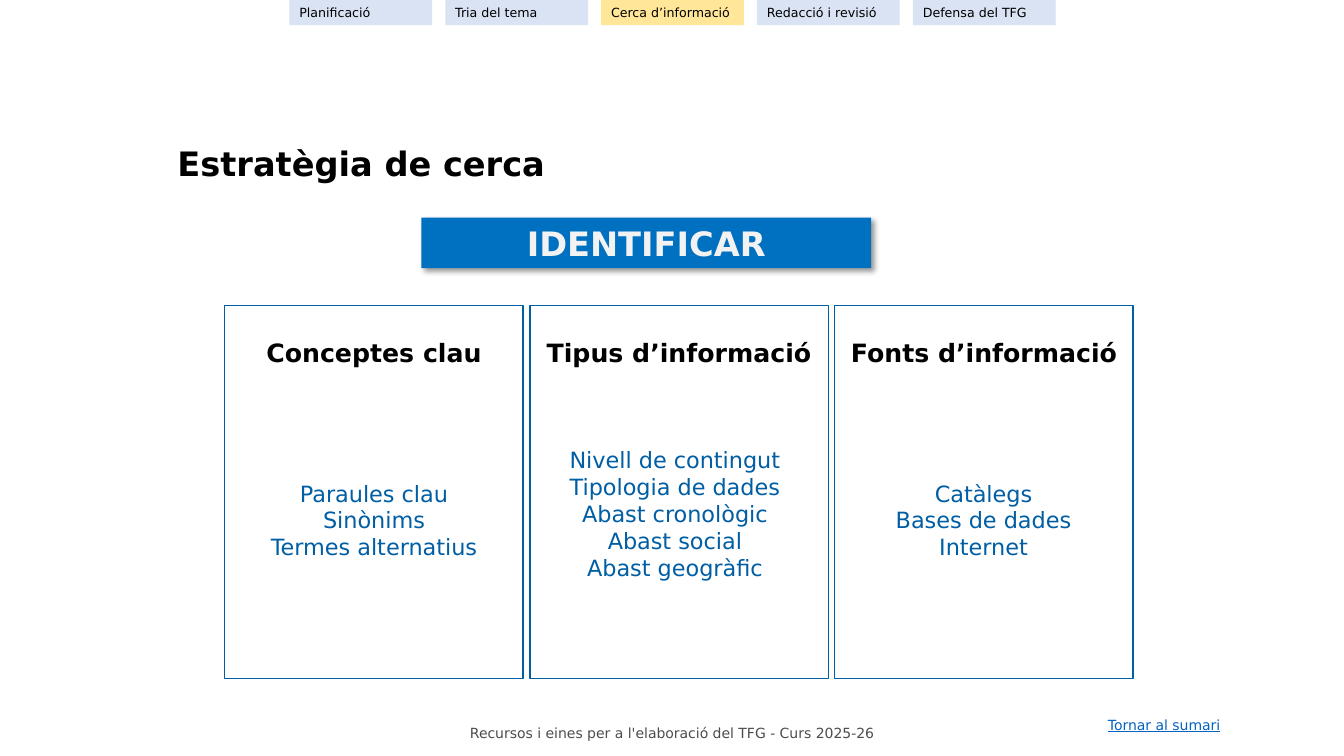
from lxml import etree
from pptx import Presentation
from pptx.dml.color import RGBColor
from pptx.enum import shapes, text
from pptx.oxml import ns
from pptx.util import Inches, Pt

FONT = "DejaVu Sans"
BLACK, BLUE, DARK_BLUE = "000000", "0070C0", "005EA4"
TAB, ACTIVE_TAB = "DAE3F3", "FFE699"
TABS = ["Planificació", "Tria del tema", "Cerca d’informació",
        "Redacció i revisió", "Defensa del TFG"]
COLUMNS = [
    ("Conceptes clau", ["Paraules clau", "Sinònims", "Termes alternatius"],
     (0.26, 1.68, 2.44, 0.91)),
    ("Tipus d’informació",
     ["Nivell de contingut", "Tipologia de dades", "Abast cronològic",
      "Abast social", "Abast geogràfic"],
     (-0.01, 1.35, 2.9, 1.48)),
    ("Fonts d’informació", ["Catàlegs", "Bases de dades", "Internet"],
     (0.12, 1.68, 2.71, 0.94)),
]


def color(value):
    return RGBColor.from_string(value)


def write(sp, lines, size, fill=BLACK, bold=False, underline=False,
          align=text.PP_ALIGN.LEFT, anchor=text.MSO_ANCHOR.TOP, wrap=True):
    tf = sp.text_frame
    tf.auto_size = text.MSO_AUTO_SIZE.NONE
    tf.word_wrap = wrap
    tf.vertical_anchor = anchor
    tf.margin_left = tf.margin_right = Inches(0.1)
    tf.margin_top = tf.margin_bottom = Inches(0.05)
    for i, line in enumerate(lines):
        p = tf.add_paragraph() if i else tf.paragraphs[0]
        p.alignment = align
        r = p.add_run()
        r.text = line
        r.font.name = FONT
        r.font.size = Pt(size)
        r.font.bold = bold
        r.font.underline = underline
        r.font.color.rgb = color(fill)


def textbox(s, box, lines, size, **fmt):
    sp = s.shapes.add_textbox(*map(Inches, box))
    write(sp, lines, size, **fmt)


def rectangle(s, box, fill=None, line=None):
    sp = s.shapes.add_shape(shapes.MSO_SHAPE.RECTANGLE, *map(Inches, box))
    sp.shadow.inherit = False
    if fill:
        sp.fill.solid()
        sp.fill.fore_color.rgb = color(fill)
    else:
        sp.fill.background()
    if line:
        sp.line.color.rgb = color(line)
        sp.line.width = Pt(1)
    else:
        sp.line.fill.background()
    return sp


def add_shadow(sp):
    effects = sp._element.spPr.find(ns.qn("a:effectLst"))
    shadow = etree.SubElement(effects, ns.qn("a:outerShdw"), blurRad=str(Pt(4)),
                              dist=str(Pt(3)), dir="2700000", algn="tl",
                              rotWithShape="0")
    tint = etree.SubElement(shadow, ns.qn("a:srgbClr"), val=BLACK)
    etree.SubElement(tint, ns.qn("a:alpha"), val="40000")


def add_title(s, box):
    title = s.shapes.title
    title.left, title.top, title.width, title.height = map(Inches, box)
    write(title, ["Estratègia de cerca"], 24, bold=True,
          anchor=text.MSO_ANCHOR.MIDDLE)


def add_banner(s, box):
    sp = rectangle(s, box, BLUE)
    add_shadow(sp)
    write(sp, ["IDENTIFICAR"], 24, fill="F2F2F2", bold=True,
          align=text.PP_ALIGN.CENTER, anchor=text.MSO_ANCHOR.MIDDLE)


def add_column(s, box, heading, items, list_box):
    left, top, width, height = box
    dx, dy, list_width, list_height = list_box
    rectangle(s, box, line=DARK_BLUE)
    textbox(s, (left, top + 0.27, width, 0.4), [heading], 18, bold=True,
            align=text.PP_ALIGN.CENTER)
    textbox(s, (left + dx, top + dy, list_width, list_height), items, 16,
            fill=DARK_BLUE, align=text.PP_ALIGN.CENTER)


def add_columns(s, box, gap):
    left, top, width, height = box
    column_width = (width - gap * (len(COLUMNS) - 1)) / len(COLUMNS)
    for i, column in enumerate(COLUMNS):
        x = left + i * (column_width + gap)
        add_column(s, (x, top, column_width, height), *column)


def add_tabs(s, box, gap, active):
    left, top, width, height = box
    tab_width = (width - gap * (len(TABS) - 1)) / len(TABS)
    for i, name in enumerate(TABS):
        x = left + i * (tab_width + gap)
        sp = rectangle(s, (x, top, tab_width, height),
                       ACTIVE_TAB if name == active else TAB)
        write(sp, [name], 9, anchor=text.MSO_ANCHOR.MIDDLE)


def add_footer(s, box):
    left, top, width, height = box
    textbox(s, (left, top + 0.08, 5.83, height), 
            ["Recursos i eines per a l'elaboració del TFG - Curs 2025-26"], 10,
            fill="4D4D4D", align=text.PP_ALIGN.CENTER,
            anchor=text.MSO_ANCHOR.MIDDLE)
    textbox(s, (left + width - 1.36, top, 1.36, height), ["Tornar al sumari"], 10,
            fill="0563C1", underline=True, wrap=False)


def main():
    prs = Presentation()
    prs.slide_width, prs.slide_height = Inches(13.33), Inches(7.5)
    s = prs.slides.add_slide(prs.slide_layouts[5])
    add_footer(s, (3.75, 7.06, 8.5, 0.27))
    add_title(s, (1.66, 1.37, 8.35, 0.5))
    add_banner(s, (4.18, 2.16, 4.46, 0.5))
    add_columns(s, (2.23, 3.03, 9.01, 3.7), 0.065)
    add_tabs(s, (2.87, 0, 7.6, 0.25), 0.13, "Cerca d’informació")
    prs.save("out.pptx")


if __name__ == "__main__":
    main()
